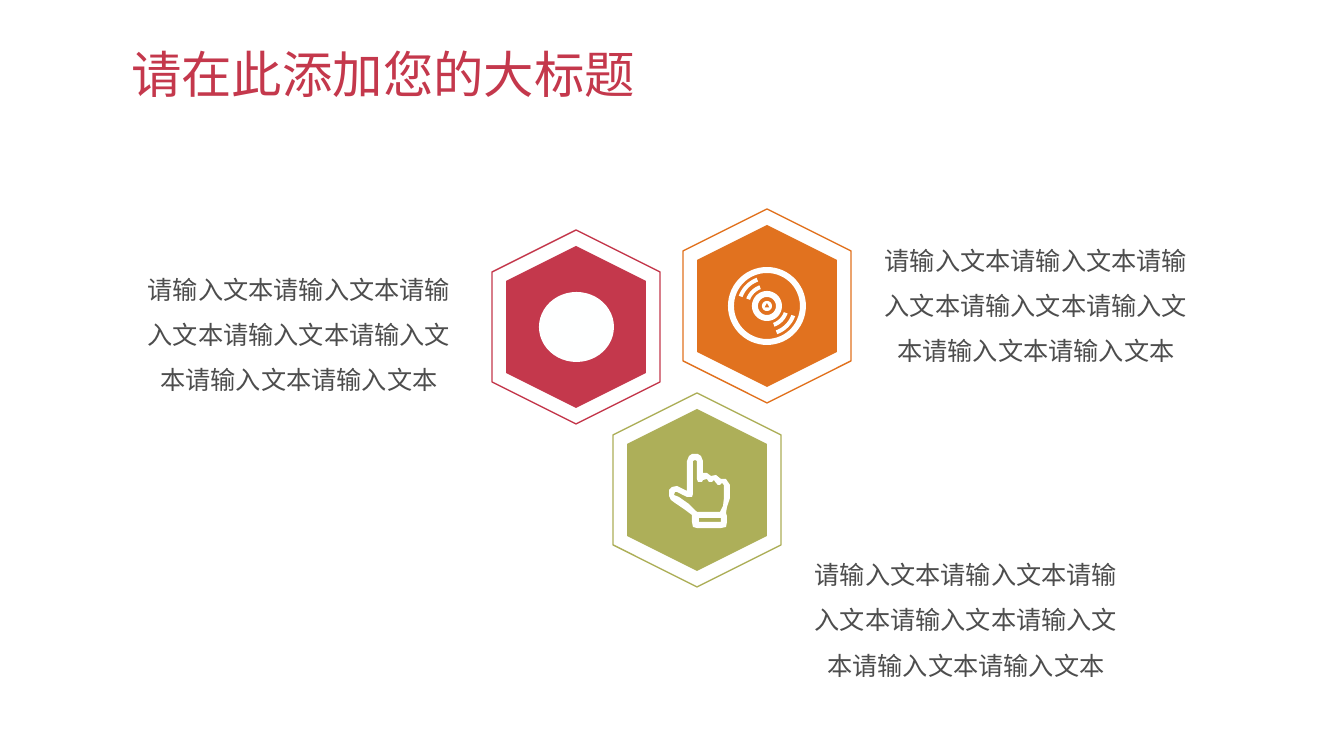
"""Build a title slide with three hexagon badges and their captions."""
from dataclasses import dataclass
from math import cos, radians, sin

from lxml.etree import SubElement
from pptx import Presentation
from pptx.dml.color import RGBColor
from pptx.enum.shapes import MSO_SHAPE as Kind
from pptx.enum.text import MSO_ANCHOR as Anchor, MSO_AUTO_SIZE as Fit, PP_ALIGN as Align
from pptx.oxml.ns import qn
from pptx.shapes.autoshape import Shape
from pptx.slide import Slide
from pptx.text.text import TextFrame
from pptx.util import Emu, Pt

Point = tuple[float, float]
Path = list[Point]

FONT = "Noto Sans CJK SC"
RED, ORANGE, GREEN = "C4384C", "E1721F", "ADAF59"
WHITE, GREY = "FEFFFF", "4D4D4D"
BODY = "请输入文本" * 7


@dataclass
class Badge:
    """A hexagon centred at x, y with a caption at left, top."""
    x: int
    y: int
    hue: str
    left: int
    top: int


BADGES = [
    Badge(576, 327, RED, 128, 238),
    Badge(697, 490, GREEN, 795, 523),
    Badge(767, 306, ORANGE, 865, 209),
]

HAND: list[Path] = [
    [(692, 515), (684, 509), (675, 503), (671, 500), (669, 496), (669, 490),
     (672, 487), (677, 486), (681, 488), (687, 491), (687, 461), (689, 456),
     (692, 454), (698, 454), (701, 456), (703, 461), (703, 473), (707, 473),
     (711, 476), (716, 475), (721, 479), (726, 479), (730, 485), (730, 498),
     (727, 507), (726, 513), (727, 516), (727, 522), (726, 527), (721, 528),
     (697, 528), (693, 527), (692, 522)],
    [(720, 512), (723, 506), (724, 498), (724, 485), (722, 483), (720, 485),
     (718, 485), (716, 483), (714, 480), (712, 482), (709, 482), (707, 479),
     (703, 480), (702, 482), (698, 482), (697, 479), (697, 461), (695, 460),
     (693, 461), (693, 494), (692, 497), (687, 497), (683, 495), (677, 492),
     (675, 492), (674, 495), (679, 497), (689, 504), (697, 512)],
    [(699, 518), (721, 518), (721, 522), (699, 522)],
]


def px(size: float) -> Emu:
    """Turn px into EMU."""
    return Emu(round(size * 914400 / 100.8))


def tint(code: str) -> RGBColor:
    """Turn a hex string into a colour."""
    return RGBColor.from_string(code)


def paint(shape: Shape, fill: str = "", line: str = "") -> None:
    """Give a shape a fill or a line, and no shadow."""
    shape.shadow.inherit = False
    if fill:
        shape.fill.solid()
        shape.fill.fore_color.rgb = tint(fill)
    else:
        shape.fill.background()
    if line:
        shape.line.color.rgb = tint(line)
        shape.line.width = Pt(1)
    else:
        shape.line.fill.background()


def write(frame: TextFrame, text: str, size: int, hue: str, align: Align, gap: float) -> None:
    """Fill a frame with one formatted paragraph."""
    frame.text = text
    frame.word_wrap = True
    frame.auto_size = Fit.NONE
    frame.vertical_anchor = Anchor.MIDDLE
    para = frame.paragraphs[0]
    para.alignment = align
    para.line_spacing = gap
    for run in para.runs:
        run.font.size = Pt(size)
        run.font.name = FONT
        run.font.color.rgb = tint(hue)
        SubElement(run.font._element, qn("a:ea")).set("typeface", FONT)


def arc(x: int, y: int, radius: int, start: int, stop: int, step: int) -> Path:
    """List points along an arc, in degrees clockwise from the right."""
    return [(x + radius * cos(radians(a)), y + radius * sin(radians(a)))
            for a in range(start, stop, step)]


def disc(x: int, y: int) -> list[Path]:
    """Outline a record with rings, a small hub and four grooves."""
    rings = [arc(x, y, radius, 0, 360, 6) for radius in (39, 33, 15, 9, 5)]
    hub = arc(x, y, 3, 30, 360, 120)
    bands = [arc(x, y, far, turn + 20, turn + 71, 5)
             + arc(x, y, far - 4, turn + 20, turn + 71, 5)[::-1]
             for turn in (0, 180) for far in (30, 22)]
    return [*rings, hub, *bands]


def icon(slide: Slide, paths: list[Path]) -> None:
    """Draw closed outlines as one white freeform."""
    lines = [[(px(x), px(y)) for x, y in path] for path in paths]
    pen = slide.shapes.build_freeform(*lines[0][0], scale=1.0)
    pen.add_line_segments(lines[0][1:], close=True)
    for line in lines[1:]:
        pen.move_to(*line[0])
        pen.add_line_segments(line[1:], close=True)
    paint(pen.convert_to_shape(), fill=WHITE)


def hexa(slide: Slide, badge: Badge, wide: int, high: int, fill: str = "", line: str = "") -> None:
    """Draw an upright hexagon around the centre of a badge."""
    shape = slide.shapes.add_shape(Kind.HEXAGON, px(badge.x - wide / 2),
                                   px(badge.y - high / 2), px(wide), px(high))
    shape.rotation = 90
    paint(shape, fill, line)


def main() -> None:
    """Build and save the deck."""
    deck = Presentation()
    deck.slide_width, deck.slide_height = px(1344), px(756)
    slide = deck.slides.add_slide(deck.slide_layouts[5])
    title = slide.shapes.title
    title.left, title.top, title.width, title.height = map(px, (121, 30, 1103, 94))
    write(title.text_frame, "请在此添加您的大标题", 36, RED, Align.LEFT, 0.9)
    for badge in BADGES:
        hexa(slide, badge, 162, 140, fill=badge.hue)
        hexa(slide, badge, 194, 168, line=badge.hue)
        box = slide.shapes.add_textbox(px(badge.left), px(badge.top), px(342), px(178))
        write(box.text_frame, BODY, 18, GREY, Align.CENTER, 1.5)
    oval = slide.shapes.add_shape(Kind.OVAL, px(539), px(292), px(75), px(70))
    paint(oval, fill=WHITE)
    icon(slide, HAND)
    icon(slide, disc(767, 306))
    deck.save("out.pptx")


if __name__ == "__main__":
    main()
